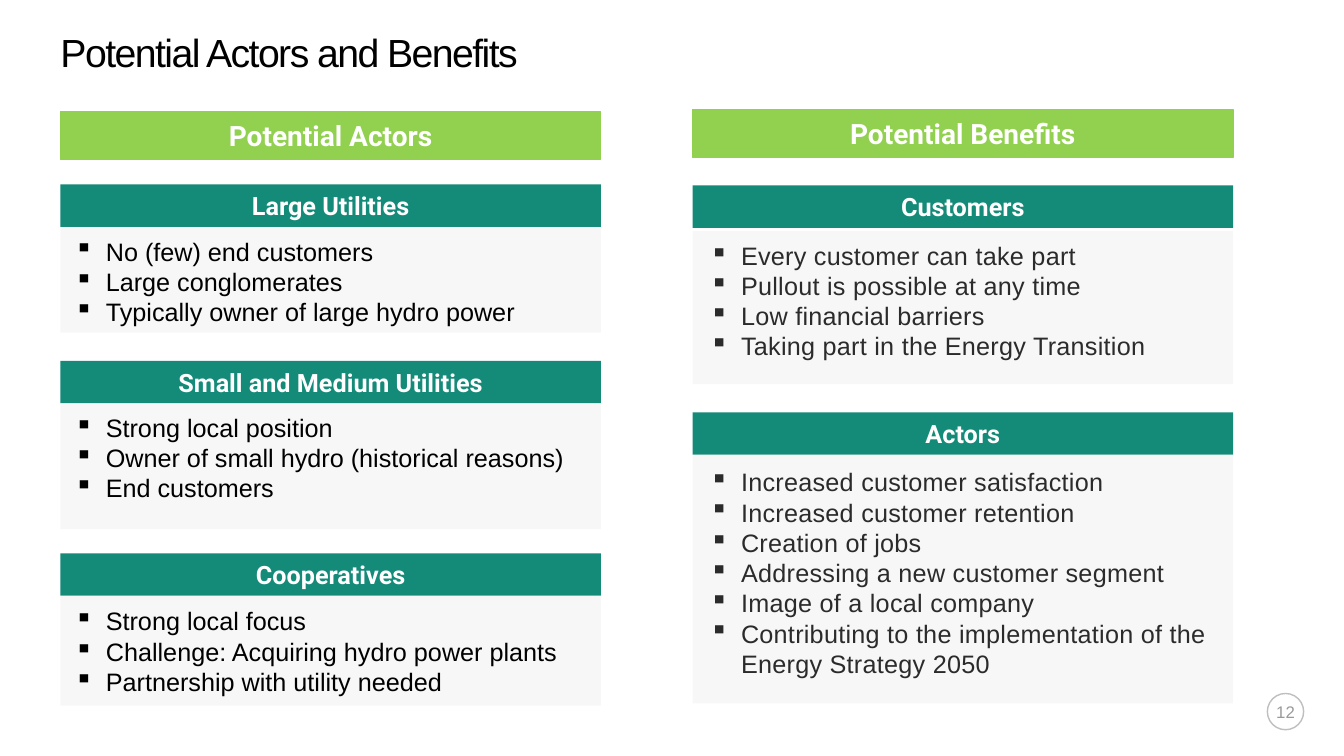
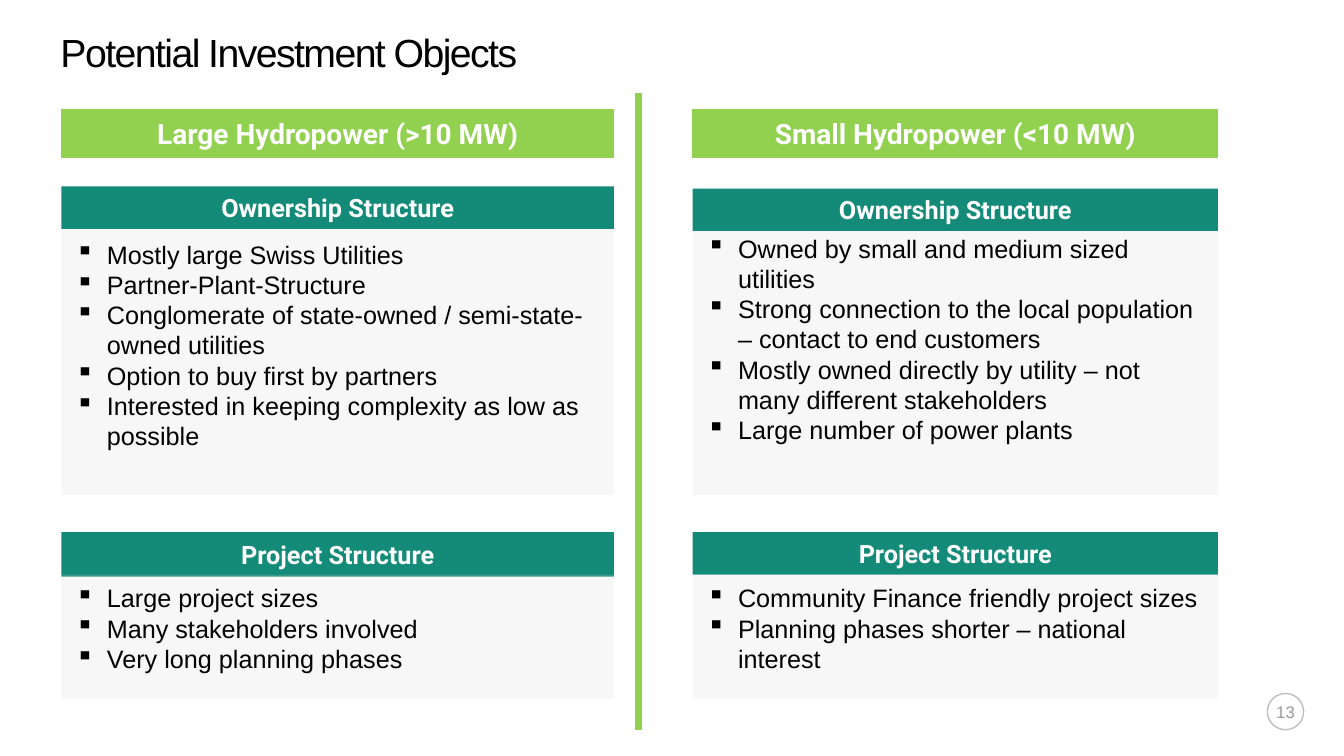
import dataclasses

import pptx
import pptx.dml.color
import pptx.enum.shapes
import pptx.enum.text
import pptx.oxml
import pptx.oxml.ns
import pptx.util

ALIGN = pptx.enum.text.PP_ALIGN
ANCHOR = pptx.enum.text.MSO_ANCHOR
SHAPE = pptx.enum.shapes.MSO_SHAPE
EMU_PER_PX = 9144


@dataclasses.dataclass(frozen=True)
class Theme:
    """Colours, fonts and type sizes shared by the slides."""

    lime: str = "92D050"
    teal: str = "148A78"
    panel: str = "D9D9D9"
    panel_opacity: int = 20
    white: str = "FFFFFF"
    black: str = "000000"
    soft_black: str = "2B2B2B"
    number: str = "9A999B"
    ring: str = "BFBFBF"
    body_font: str = "Arial"
    heading_font: str = "Roboto"
    title_size: int = 28
    title_leading: int = 29
    band_size: int = 20
    text_size: int = 18
    number_size: int = 12


THEME = Theme()


@dataclasses.dataclass(frozen=True)
class Section:
    """A heading bar with a bulleted panel below it."""

    heading: str
    bullets: list
    top: int
    bottom: int
    text_top: int = 9
    bar_height: int = 42
    gap: int = 0


@dataclasses.dataclass(frozen=True)
class Column:
    """A band with the sections that stand below it."""

    band: str
    left: int
    width: int
    sections: list
    band_top: int = 109
    text_left: int = 12
    text_right: int = 0
    text_color: str = THEME.black
    tracking: float = 0


def px(length):
    """Turn px into EMU."""
    return pptx.util.Emu(length * EMU_PER_PX)


def rgb(value):
    """Turn a hex string into a colour."""
    return pptx.dml.color.RGBColor.from_string(value)


def write_text(shape, lines, *, size, color, font=THEME.body_font, bold=False,
               align=ALIGN.LEFT, anchor=ANCHOR.TOP, insets=(0, 0, 0, 0),
               tracking=0, leading=None, bullet=None):
    """Fill a shape with one paragraph per line in the given format."""
    frame = shape.text_frame
    frame.word_wrap = True
    frame.auto_size = pptx.enum.text.MSO_AUTO_SIZE.NONE
    frame.vertical_anchor = anchor
    (frame.margin_left, frame.margin_top,
     frame.margin_right, frame.margin_bottom) = map(px, insets)
    for index, line in enumerate(lines):
        paragraph = frame.paragraphs[0] if index == 0 else frame.add_paragraph()
        paragraph.alignment = align
        if leading:
            paragraph.line_spacing = pptx.util.Pt(leading)
        if bullet:
            properties = paragraph._p.get_or_add_pPr()
            properties.set("marL", str(px(33)))
            properties.set("indent", str(px(-31)))
            mark = pptx.oxml.ns.qn("a:buChar")
            properties.append(properties.makeelement(mark, {"char": bullet}))
        run = paragraph.add_run()
        run.text = line
        run.font.name = font
        run.font.size = pptx.util.Pt(size)
        run.font.bold = bold
        run.font.color.rgb = rgb(color)
        if tracking:
            run._r.get_or_add_rPr().set("spc", str(round(tracking * 100)))


def add_box(slide, left, top, width, height, *, kind=SHAPE.RECTANGLE,
            fill=None, opacity=100, line=None, line_width=0.75):
    """Add a preset shape with a flat fill and outline."""
    shape = slide.shapes.add_shape(kind, px(left), px(top), px(width), px(height))
    shape.shadow.inherit = False
    if fill:
        shape.fill.solid()
        shape.fill.fore_color.rgb = rgb(fill)
        if opacity < 100:
            color = shape._element.spPr.find(".//" + pptx.oxml.ns.qn("a:srgbClr"))
            alpha = pptx.oxml.ns.qn("a:alpha")
            color.append(color.makeelement(alpha, {"val": str(opacity * 1000)}))
    else:
        shape.fill.background()
    if line:
        shape.line.color.rgb = rgb(line)
        shape.line.width = pptx.util.Pt(line_width)
    else:
        shape.line.fill.background()
    return shape


def add_heading(slide, text, left, top, width, height, *, size, fill, line=None):
    """Add a coloured bar with a centred bold heading."""
    bar = add_box(slide, left, top, width, height, fill=fill, line=line)
    write_text(bar, [text], size=size, color=THEME.white, font=THEME.heading_font,
               bold=True, align=ALIGN.CENTER, anchor=ANCHOR.MIDDLE)


def add_section(slide, column, section):
    """Add a heading bar and its bulleted panel in a column."""
    add_heading(slide, section.heading, column.left, section.top, column.width,
                section.bar_height, size=THEME.text_size, fill=THEME.teal)
    panel_top = section.top + section.bar_height + section.gap
    panel = add_box(slide, column.left, panel_top, column.width,
                    section.bottom - panel_top, fill=THEME.panel,
                    opacity=THEME.panel_opacity)
    write_text(panel, section.bullets, size=THEME.text_size,
               color=column.text_color, tracking=column.tracking, bullet="▪",
               insets=(column.text_left, section.text_top, column.text_right, 0))


def add_column(slide, column):
    """Add a band and every section below it."""
    add_heading(slide, column.band, column.left, column.band_top, column.width, 47,
                size=THEME.band_size, fill=THEME.lime, line=THEME.lime)
    for section in column.sections:
        add_section(slide, column, section)


def add_divider(slide, x, top, bottom):
    """Add the vertical rule between two columns."""
    divider = slide.shapes.add_connector(
        pptx.enum.shapes.MSO_CONNECTOR.STRAIGHT, px(x), px(top), px(x), px(bottom))
    divider.line.color.rgb = rgb(THEME.lime)
    divider.line.width = pptx.util.Pt(5.25)
    properties = divider._element.spPr
    properties.append(properties.makeelement(pptx.oxml.ns.qn("a:effectLst"), {}))


def add_page_number(slide, number):
    """Add the ringed page number at the lower right."""
    ring = add_box(slide, 1257, 688, 36, 36, kind=SHAPE.OVAL,
                   line=THEME.ring, line_width=1)
    write_text(ring, [str(number)], size=THEME.number_size, color=THEME.number,
               align=ALIGN.CENTER, anchor=ANCHOR.MIDDLE, tracking=0.1)


def add_comparison_slide(presentation, title, columns, number, divided=False):
    """Add a titled slide with columns side by side."""
    slide = presentation.slides.add_slide(presentation.slide_layouts[5])
    heading = slide.shapes.title
    heading.left, heading.top, heading.width, heading.height = map(
        px, (60, 34, 1116, 41))
    write_text(heading, [title], size=THEME.title_size, color=THEME.black,
               tracking=-1.1, leading=THEME.title_leading)
    for column in columns:
        add_column(slide, column)
    if divided:
        add_divider(slide, 633, 92, 724)
    add_page_number(slide, number)


ACTORS = Column("Potential Actors", 60, 536, [
    Section("Large Utilities", [
        "No (few) end customers",
        "Large conglomerates",
        "Typically owner of large hydro power",
    ], 183, 330),
    Section("Small and Medium Utilities", [
        "Strong local position",
        "Owner of small hydro (historical reasons)",
        "End customers",
    ], 358, 525),
    Section("Cooperatives", [
        "Strong local focus",
        "Challenge: Acquiring hydro power plants",
        "Partnership with utility needed",
    ], 549, 700, text_top=10),
], band_top=111)

BENEFITS = Column("Potential Benefits", 687, 536, [
    Section("Customers", [
        "Every customer can take part",
        "Pullout is possible at any time",
        "Low financial barriers",
        "Taking part in the Energy Transition",
    ], 184, 381, gap=3),
    Section("Actors", [
        "Increased customer satisfaction",
        "Increased customer retention",
        "Creation of jobs",
        "Addressing a new customer segment",
        "Image of a local company",
        "Contributing to the implementation of the Energy Strategy 2050",
    ], 409, 698, text_top=12),
], text_left=15, text_right=23, text_color=THEME.soft_black, tracking=0.2)

LARGE_HYDROPOWER = Column("Large Hydropower (>10 MW)", 61, 548, [
    Section("Ownership Structure", [
        "Mostly large Swiss Utilities",
        "Partner-Plant-Structure",
        "Conglomerate of state-owned / semi-state-owned utilities",
        "Option to buy first by partners",
        "Interested in keeping complexity as low as possible",
    ], 185, 491, text_top=10),
    Section("Project Structure", [
        "Large project sizes",
        "Many stakeholders involved",
        "Very long planning phases",
    ], 528, 693, text_top=8, bar_height=44, gap=-2),
])

SMALL_HYDROPOWER = Column("Small Hydropower (<10 MW)", 687, 521, [
    Section("Ownership Structure", [
        "Owned by small and medium sized utilities",
        "Strong connection to the local population – contact to end customers",
        "Mostly owned directly by utility – not many different stakeholders",
        "Large number of power plants",
    ], 187, 491, text_top=2),
    Section("Project Structure", [
        "Community Finance friendly project sizes",
        "Planning phases shorter – national interest",
    ], 528, 693, text_top=8),
], text_right=16)


def main():
    """Build and save the presentation."""
    presentation = pptx.Presentation()
    presentation.slide_width = px(1333)
    presentation.slide_height = px(750)
    add_comparison_slide(presentation, "Potential Actors and Benefits",
                         [ACTORS, BENEFITS], 12)
    add_comparison_slide(presentation, "Potential Investment Objects",
                         [LARGE_HYDROPOWER, SMALL_HYDROPOWER], 13, divided=True)
    presentation.save("out.pptx")


if __name__ == "__main__":
    main()
